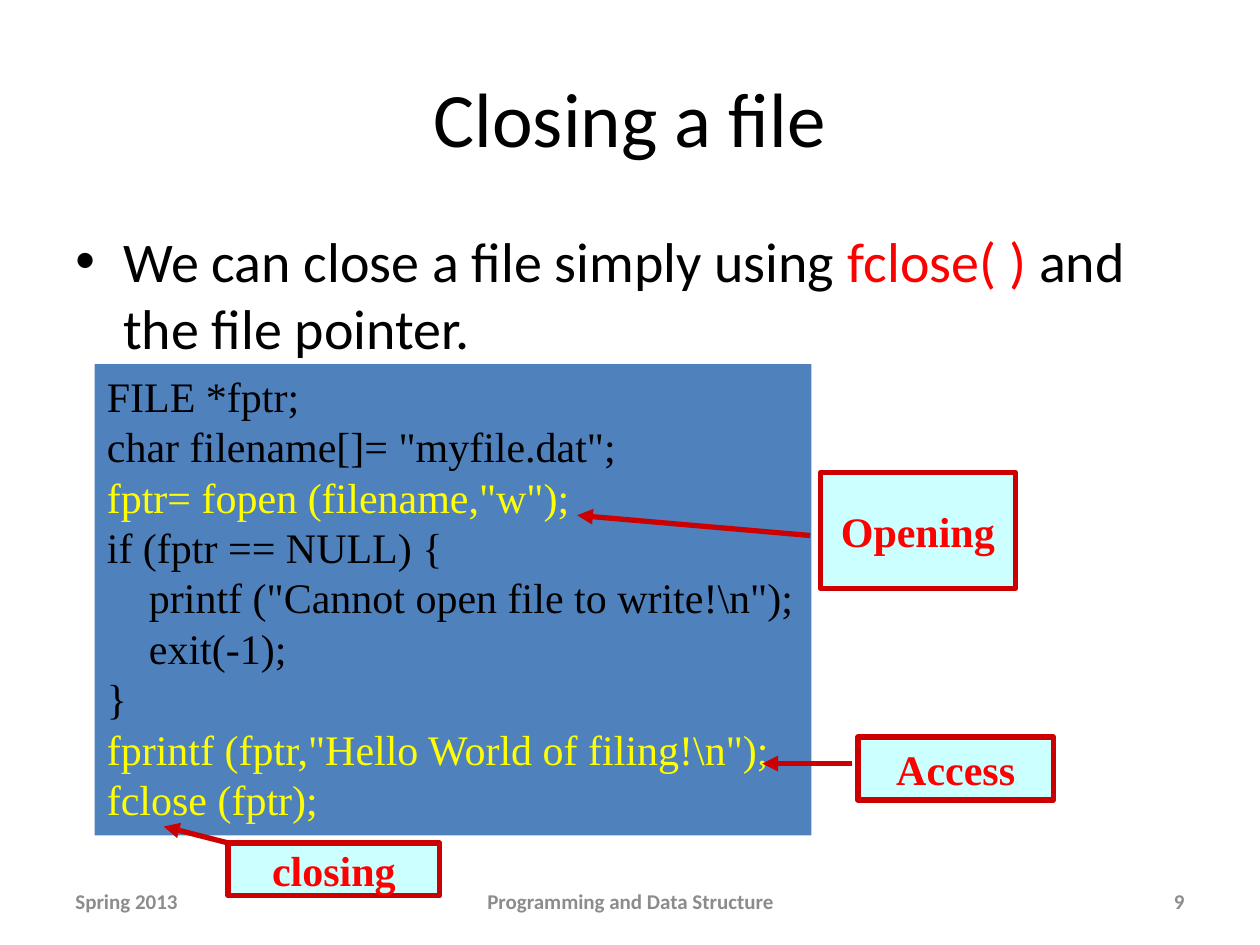
from dataclasses import dataclass

from lxml.etree import SubElement
from pptx import Presentation
from pptx.dml.color import RGBColor
from pptx.enum.shapes import MSO_CONNECTOR, MSO_SHAPE
from pptx.enum.text import MSO_ANCHOR, PP_ALIGN
from pptx.oxml.ns import qn
from pptx.util import Inches, Pt

COLS, ROWS = 40, 30
SLIDE_W, SLIDE_H = Inches(10), Inches(7.5)
COLORS = {
    "black": "000000", "red": "FF0000", "yellow": "FFFF00", "gray": "8C8C8C",
    "code": "4F81BD", "label": "CCFFFF", "border": "CC0000",
}
HEADING = {"name": "Calibri", "size": Pt(44)}
BODY = {"name": "Calibri", "size": Pt(32)}
FOOTER = {"name": "Calibri", "size": Pt(12), "bold": True}
CODE = {"name": "Times New Roman", "size": Pt(24)}
LABEL = {**CODE, "bold": True}
BULLET_INDENT, CODE_INDENT = Inches(0.38), Pt(24)


@dataclass(frozen=True)
class Box:
    """A place on the slide, in grid columns and rows."""
    col: float
    row: float
    cols: float
    rows: float

    def emu(self) -> tuple:
        return x(self.col), y(self.row), x(self.cols), y(self.rows)


@dataclass(frozen=True)
class CodeLine:
    text: str
    color: str = "black"
    level: int = 0


@dataclass(frozen=True)
class Callout:
    text: str
    box: Box
    start: tuple
    end: tuple


FOOTERS = [
    ("Spring 2013", Box(2, 27.8, 9.32, 1.6), PP_ALIGN.LEFT),
    ("Programming and Data Structure", Box(13.68, 27.8, 12.68, 1.6), PP_ALIGN.CENTER),
    ("9", Box(28.68, 27.8, 9.32, 1.6), PP_ALIGN.RIGHT),
]
CODE_LINES = [
    CodeLine("FILE *fptr;"),
    CodeLine('char filename[]= "myfile.dat";'),
    CodeLine('fptr= fopen (filename,"w");', "yellow"),
    CodeLine("if (fptr == NULL) {"),
    CodeLine('printf ("Cannot open file to write!\\n");', level=1),
    CodeLine("exit(-1);", level=1),
    CodeLine("}"),
    CodeLine('fprintf (fptr,"Hello World of filing!\\n");', "yellow"),
    CodeLine("fclose (fptr);", "yellow"),
]
CALLOUTS = [
    Callout("Opening", Box(26.04, 15, 6.2, 3.68), (25.72, 17), (18.32, 16.36)),
    Callout("Access", Box(27.24, 23.4, 6.2, 2), (27.04, 24.24), (24.2, 24.24)),
    Callout("closing", Box(7.24, 26.76, 6.72, 1.68), (7.24, 26.76), (5.2, 26.24)),
]


def x(col: float) -> int:
    return round(SLIDE_W * col / COLS)


def y(row: float) -> int:
    return round(SLIDE_H * row / ROWS)


def rgb(name: str) -> RGBColor:
    return RGBColor.from_string(COLORS[name])


def add_run(p, text: str, style: dict, color: str) -> None:
    r = p.add_run()
    r.text = text
    for key, value in style.items():
        setattr(r.font, key, value)
    r.font.color.rgb = rgb(color)


def add_text(s, box: Box, anchor=MSO_ANCHOR.MIDDLE):
    """Add a wrapping text box and return its text frame."""
    tf = s.shapes.add_textbox(*box.emu()).text_frame
    tf.word_wrap = True
    tf.vertical_anchor = anchor
    return tf


def add_line_of_text(s, text: str, box: Box, align, style: dict, color: str) -> None:
    p = add_text(s, box).paragraphs[0]
    p.alignment = align
    add_run(p, text, style, color)


def add_rect(shapes, box: Box, fill: str):
    sp = shapes.add_shape(MSO_SHAPE.RECTANGLE, *box.emu())
    sp.shadow.inherit = False
    sp.fill.solid()
    sp.fill.fore_color.rgb = rgb(fill)
    sp.line.fill.background()
    return sp


def set_border(line) -> None:
    line.color.rgb = rgb("border")
    line.width = Pt(3)


def add_bullet(s) -> None:
    p = add_text(s, Box(2, 7, 36, 19.8), MSO_ANCHOR.TOP).paragraphs[0]
    p.space_before = Pt(6.4)
    pPr = p._p.get_or_add_pPr()
    pPr.set("marL", str(BULLET_INDENT))
    pPr.set("indent", str(-BULLET_INDENT))
    SubElement(pPr, qn("a:buFont")).set("typeface", "Arial")
    SubElement(pPr, qn("a:buChar")).set("char", "•")
    add_run(p, "We can close a file simply using ", BODY, "black")
    add_run(p, "fclose( )", BODY, "red")
    add_run(p, " and the file pointer.", BODY, "black")


def add_code(s) -> None:
    tf = add_rect(s.shapes, Box(3, 11.56, 22.76, 14.96), "code").text_frame
    tf.word_wrap = True
    tf.margin_right = 0
    tf.vertical_anchor = MSO_ANCHOR.TOP
    for i, line in enumerate(CODE_LINES):
        p = tf.add_paragraph() if i else tf.paragraphs[0]
        p.alignment = PP_ALIGN.LEFT
        p._p.get_or_add_pPr().set("marL", str(line.level * CODE_INDENT))
        add_run(p, line.text, CODE, line.color)


def add_callout(s, callout: Callout) -> None:
    shapes = s.shapes.add_group_shape().shapes
    sp = add_rect(shapes, callout.box, "label")
    set_border(sp.line)
    tf = sp.text_frame
    tf.word_wrap = False
    tf.vertical_anchor = MSO_ANCHOR.MIDDLE
    p = tf.paragraphs[0]
    p.alignment = PP_ALIGN.CENTER
    add_run(p, callout.text, LABEL, "red")

    (c1, r1), (c2, r2) = callout.start, callout.end
    arrow = shapes.add_connector(MSO_CONNECTOR.STRAIGHT, x(c1), y(r1), x(c2), y(r2))
    set_border(arrow.line)
    SubElement(arrow.line._get_or_add_ln(), qn("a:tailEnd")).set("type", "triangle")
    SubElement(arrow._element.spPr, qn("a:effectLst"))


def main() -> None:
    prs = Presentation()
    prs.slide_width, prs.slide_height = SLIDE_W, SLIDE_H
    s = prs.slides.add_slide(prs.slide_layouts[6])
    add_line_of_text(s, "Closing a file", Box(2, 1.2, 36, 5), PP_ALIGN.CENTER,
                     HEADING, "black")
    add_bullet(s)
    for text, box, align in FOOTERS:
        add_line_of_text(s, text, box, align, FOOTER, "gray")
    add_code(s)
    for callout in CALLOUTS:
        add_callout(s, callout)
    prs.save("out.pptx")


if __name__ == "__main__":
    main()
